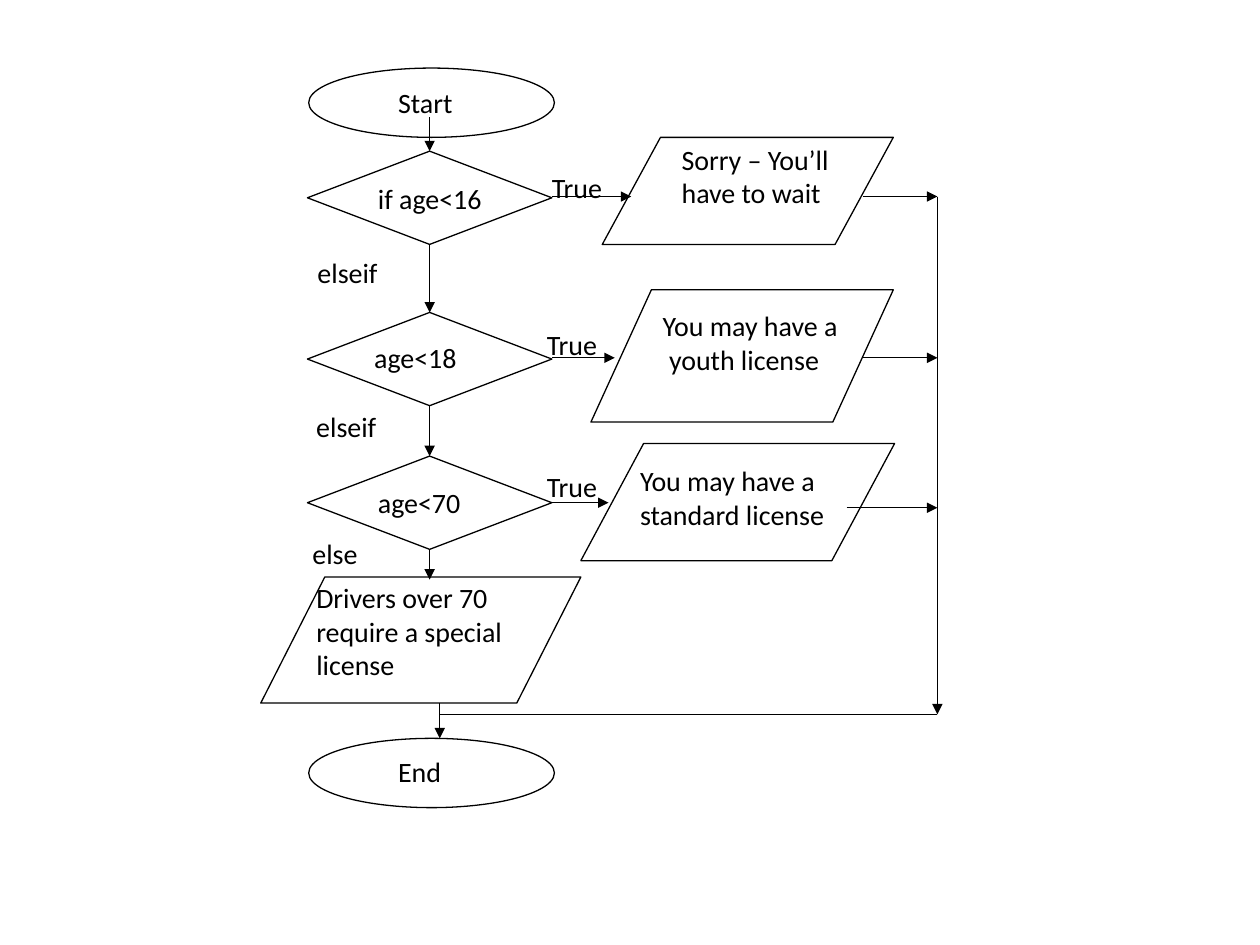
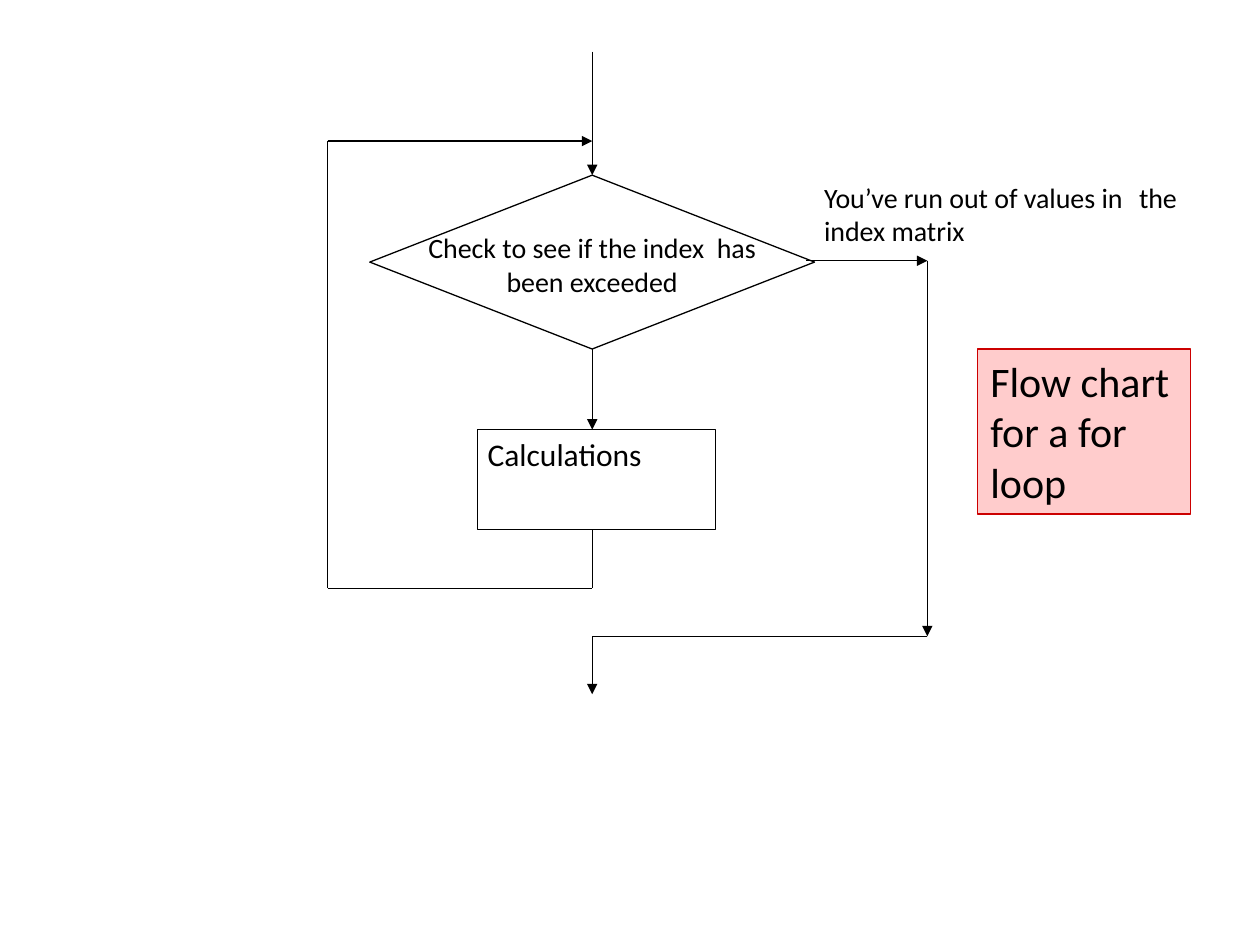
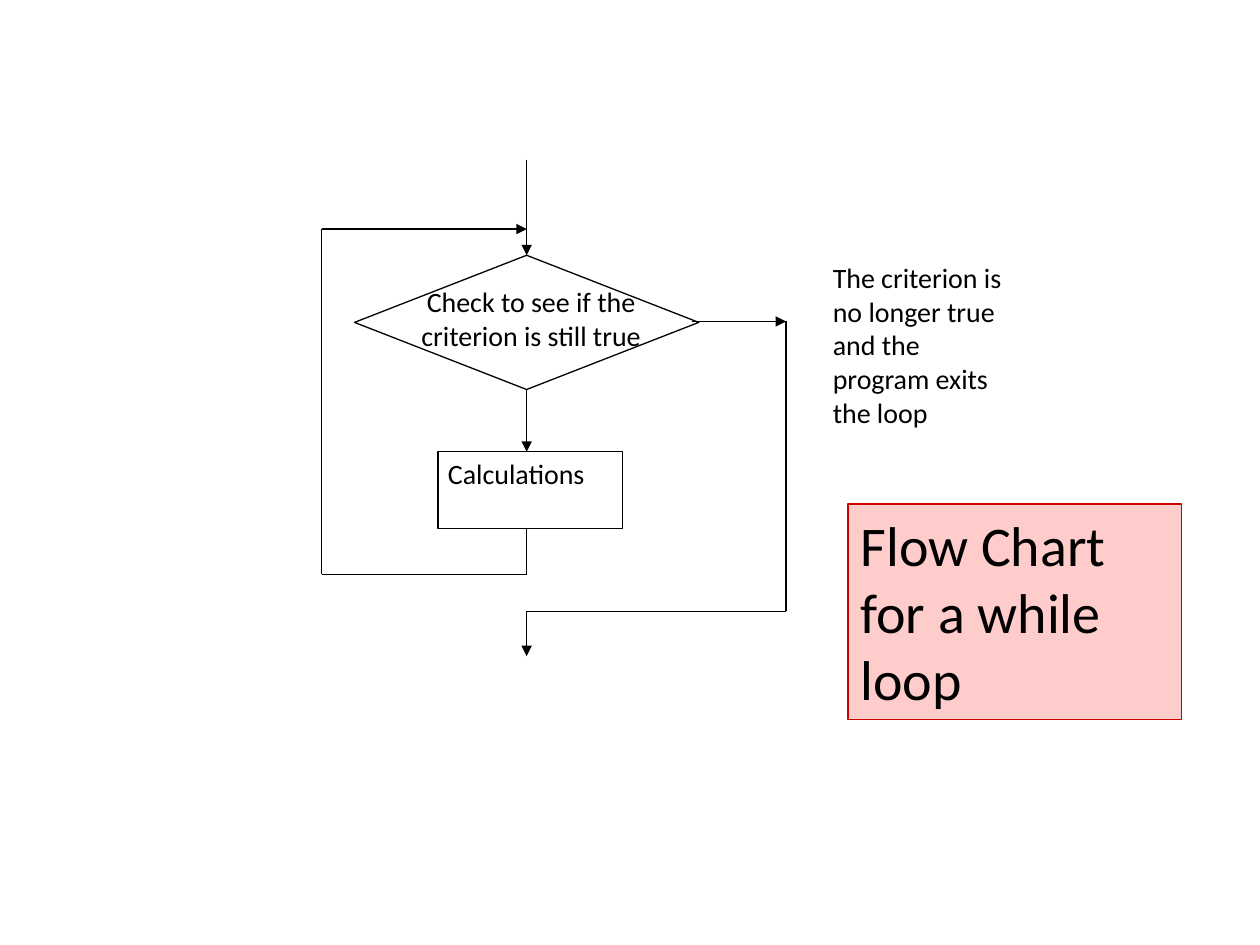
from dataclasses import dataclass
from pptx import Presentation
from pptx.dml.color import RGBColor as Rgb
from pptx.enum.shapes import MSO_CONNECTOR as Wire, MSO_SHAPE as Kind
from pptx.enum.text import MSO_ANCHOR as Anchor, MSO_AUTO_SIZE as Fit, PP_ALIGN as Align
from pptx.oxml.ns import qn
from pptx.util import Inches, Pt
from lxml.etree import SubElement as Sub


@dataclass
class Theme:
    font: str = "Calibri"
    ink: Rgb = Rgb(0, 0, 0)
    paper: Rgb = Rgb(255, 255, 255)
    blush: Rgb = Rgb(255, 204, 204)
    red: Rgb = Rgb(204, 0, 0)
    rule: Pt = Pt(0.75)
    small: Pt = Pt(16)
    mid: Pt = Pt(18)
    large: Pt = Pt(24)
    huge: Pt = Pt(32)


look = Theme()
deck = Presentation()
deck.slide_width, deck.slide_height = Inches(10), Inches(7.5)
col, row = deck.slide_width / 100, deck.slide_height / 75


def put(slide, kind, at, text="", size=look.small, align=Align.LEFT, pad=(0.08, 0.04)):
    area = [int(n * unit) for n, unit in zip(at, (col, row, col, row))]
    if kind == "title":
        shape = slide.shapes.title
        shape.left, shape.top, shape.width, shape.height = area
    elif kind is None:
        shape = slide.shapes.add_textbox(*area)
    else:
        shape = slide.shapes.add_shape(kind, *area)
        shape.shadow.inherit = False
    if kind is not None:
        shape.fill.solid()
        shape.fill.fore_color.rgb = look.blush if kind == "title" else look.paper
        shape.line.color.rgb = look.red if kind == "title" else look.ink
        shape.line.width = look.rule
    if text:
        frame = shape.text_frame
        frame.text = text
        frame.word_wrap, frame.auto_size = True, Fit.NONE
        frame.vertical_anchor = Anchor.TOP
        frame.margin_left = frame.margin_right = Inches(pad[0])
        frame.margin_top = frame.margin_bottom = Inches(pad[1])
        para = frame.paragraphs[0]
        para.alignment = align
        para.font.name, para.font.size = look.font, size
        para.font.color.rgb = look.ink
    return shape


def link(slide, spots, head=True):
    for start, end in zip(spots, spots[1:]):
        ends = [int(n * unit) for n, unit in zip(start + end, (col, row, col, row))]
        wire = slide.shapes.add_connector(Wire.STRAIGHT, *ends)
        wire.line.color.rgb, wire.line.width = look.ink, look.rule
        if head and end == spots[-1]:
            Sub(wire.line._get_or_add_ln(), qn("a:tailEnd"), type="triangle")
        Sub(wire._element.spPr, qn("a:effectLst"))


slide = deck.slides.add_slide(deck.slide_layouts[6])
axis, rail, back = 34.1, 74.4, 34.9
for top in (5.4, 58.6):
    put(slide, Kind.OVAL, (24.5, top, 19.5, 5.5))
for top in (12, 24.8, 36.2):
    put(slide, Kind.FLOWCHART_DECISION, (24.4, top, 19.4, 7.4))
for at in (
    (47.8, 10.9, 23.1, 8.5),
    (46.9, 23, 24, 10.5),
    (46.1, 35.2, 24.9, 9.3),
    (20.7, 45.8, 25.4, 10),
):
    put(slide, Kind.FLOWCHART_DATA, at)

for top, low in ((9.3, 12), (19.4, 24.8), (32.2, 36.2), (43.6, 46)):
    link(slide, [(axis, top), (axis, low)])
for yes, end, out, exit in (
    (15.6, 50.1, 68.5, 15.6),
    (28.4, 48.8, 68.5, 28.4),
    (39.9, 48.3, 67.2, 40.3),
):
    link(slide, [(43.8, yes), (end, yes)])
    link(slide, [(out, exit), (rail, exit)])
link(slide, [(rail, 15.6), (rail, 56.7)])
link(slide, [(rail, 56.7), (back, 56.7)], False)
link(slide, [(back, 55.8), (back, 58.6)])

for text, at in (
    ("Start", (30.9, 6.5, 7.6, 3.5)),
    ("if age<16", (29.3, 14.1, 13.4, 5)),
    ("age<18", (29, 26.7, 13.7, 5.5)),
    ("age<70", (29.3, 38.2, 11.7, 6.6)),
    ("True", (43.1, 13.2, 10.7, 3.6)),
    ("True", (42.7, 25.7, 10.8, 3.6)),
    ("True", (42.7, 37, 10.8, 3.6)),
    ("Sorry – You’ll have to wait", (53.4, 11, 13.7, 5.2)),
    ("You may have a  youth license", (51.9, 24.2, 15.3, 5.2)),
    ("You may have a standard license", (50.1, 36.5, 22, 11.7)),
    ("Drivers over 70 require a special license", (24.4, 45.8, 17.1, 5.2)),
    ("elseif", (24.5, 20, 9.6, 3)),
    ("elseif", (24.4, 32.2, 8.7, 3)),
    ("else", (24.1, 42.3, 7.6, 3)),
    ("End", (30.9, 59.6, 12.4, 5.5)),
):
    put(slide, None, at, text, pad=(0.07, 0.03))

for axis, top, wide, tall, size, head, test, note, name in (
    (47, 4.1, 1, 1, look.mid, True,
     ("Check to see if the index  has been exceeded", (32.8, 17.9, 28.4, 14.4)),
     ("You’ve run out of values in \tthe index matrix", (64.6, 13.9, 29.9, 19.8), 0),
     ("Flow chart for a for loop", (77.6, 27.7, 16.9, 13.1), look.large)),
    (41.8, 12.7, 0.774, 0.772, look.small, False,
     ("Check to see if the criterion is still true", (31.2, 22.2, 21.9, 11.1)),
     ("The criterion is no longer true and the program exits the loop",
      (60.3, 20.3, 20.5, 15.3), 0.5),
     ("Flow Chart for a while loop", (67.3, 40, 26.5, 17.1), look.huge)),
):
    slide = deck.slides.add_slide(deck.slide_layouts[5])
    left, edge, door, right = [axis + wide * n for n in (-21, -17.65, 17, 26.6)]
    join, gate, turn, base, calc, foot, low, out, end = [
        top + tall * n for n in (7.1, 9.8, 16.6, 23.6, 30, 37.9, 42.6, 46.4, 51)
    ]
    put(slide, "title", name[1], name[0], name[2], pad=(0.1, 0.05))
    put(slide, Kind.FLOWCHART_DECISION, (edge, gate, 35.3 * wide, base - gate))
    put(slide, Kind.RECTANGLE, (axis - 9.1 * wide, calc, 18.9 * wide, foot - calc),
        "Calculations", size)
    link(slide, [(axis, top), (axis, gate)])
    link(slide, [(axis, base), (axis, calc)])
    link(slide, [(axis, foot), (axis, low), (left, low), (left, join), (axis, join)])
    link(slide, [(door, turn), (right, turn)])
    link(slide, [(right, turn), (right, out)], head)
    link(slide, [(right, out), (axis, out), (axis, end)])
    put(slide, None, test[1], test[0], align=Align.CENTER)
    text, at, indent = note
    para = put(slide, None, at, text).text_frame.paragraphs[0]
    if indent:
        para.level = 1
        para._p.get_or_add_pPr().set("marL", str(Inches(indent)))

deck.save("out.pptx")
